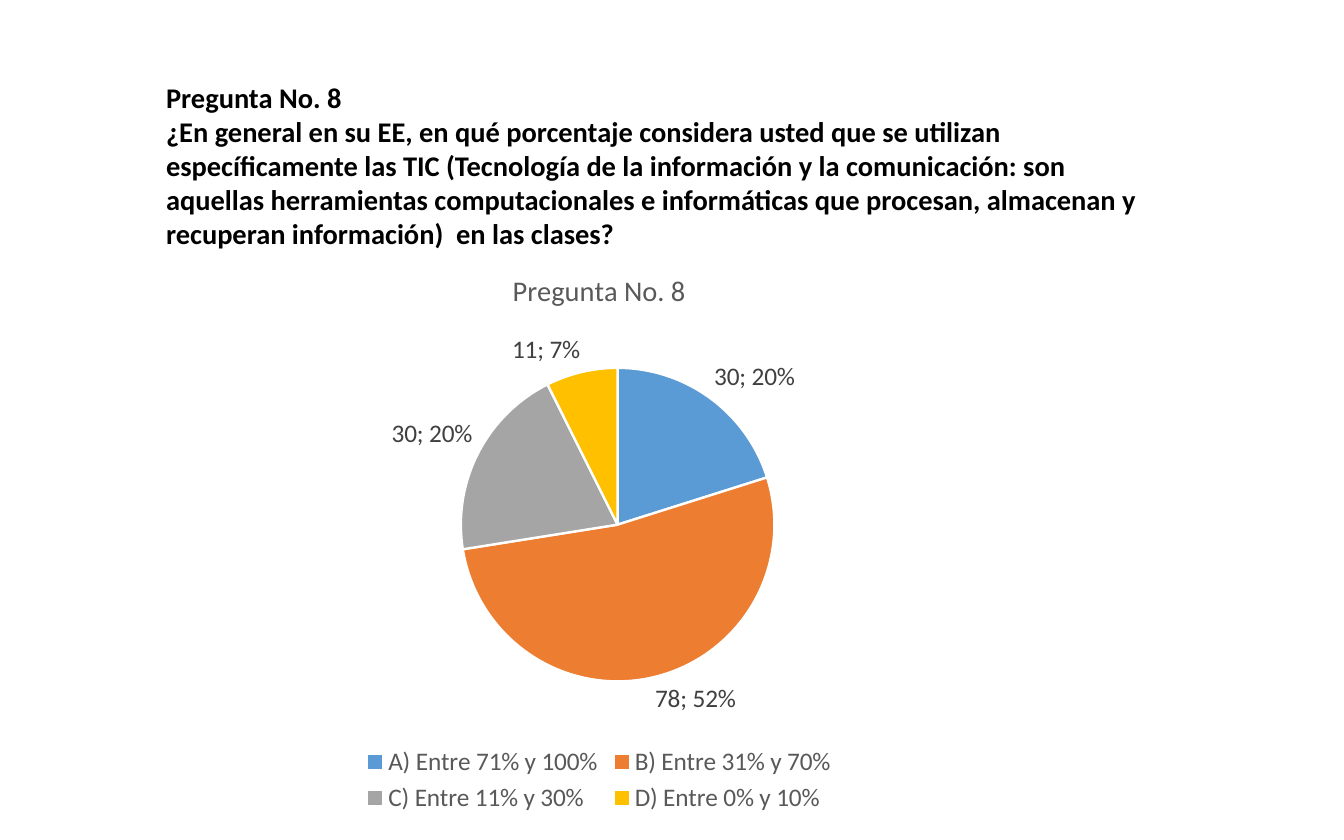
from lxml import etree
from pptx import Presentation
from pptx.chart.data import CategoryChartData
from pptx.dml.color import RGBColor
from pptx.enum.chart import XL_CHART_TYPE as CT, XL_LABEL_POSITION as LP, XL_LEGEND_POSITION as LEG
from pptx.oxml import parse_xml
from pptx.oxml.ns import nsdecls, qn
from pptx.util import Pt

FONT = "Calibri"
TITLE = "Pregunta No. 8"
QUESTION = (
    "¿En general en su EE, en qué porcentaje considera usted que se utilizan "
    "específicamente las TIC (Tecnología de la información y la comunicación: son "
    "aquellas herramientas computacionales e informáticas que procesan, almacenan y "
    "recuperan información)  en las clases?"
)
ANSWERS = [
    ("A) Entre 71% y 100%", 30, "5B9BD5"),
    ("B) Entre 31% y 70%", 78, "ED7D31"),
    ("C) Entre 11% y 30%", 30, "A5A5A5"),
    ("D) Entre 0% y 10%", 11, "FFC000"),
]


def rgb(value):
    """Turn a hex string into a colour."""
    return RGBColor.from_string(value)


def style(font, size, color, bold=False):
    """Set the typeface, size, colour and weight of a font."""
    font.name, font.size, font.bold = FONT, Pt(size), bold
    font.color.rgb = rgb(color)


def add_question(slide, x, y, w, h):
    """Write the heading and the question in the given box."""
    tf = slide.shapes.add_textbox(Pt(x), Pt(y), Pt(w), Pt(h)).text_frame
    tf.word_wrap = True
    tf.text = TITLE
    tf.add_paragraph().text = QUESTION
    for p in tf.paragraphs:
        for r in p.runs:
            style(r.font, 18, "000000", bold=True)


def place_plot(chart, x, y, w, h):
    """Fix the pie area as fractions of the chart."""
    area = chart.plots[0]._element.getparent()
    for old in area.findall(qn("c:layout")):
        area.remove(old)
    sizes = "".join(f'<c:{k} val="{v}"/>' for k, v in zip("xywh", (x, y, w, h)))
    area.insert(0, parse_xml(
        f'<c:layout {nsdecls("c")}><c:manualLayout><c:layoutTarget val="inner"/>'
        f'<c:xMode val="edge"/><c:yMode val="edge"/>{sizes}</c:manualLayout></c:layout>'))


def add_labels(plot):
    """Show value and percentage outside each slice."""
    plot.has_data_labels = True
    labels = plot.data_labels
    labels.show_value = labels.show_percentage = True
    labels.position = LP.OUTSIDE_END
    style(labels.font, 16, "404040")
    sep = etree.Element(qn("c:separator"))
    sep.text = "; "
    labels._element.find(qn("c:showBubbleSize")).addnext(sep)


def add_answers(slide, x, y, w, h):
    """Draw the pie of answers with title and legend in the given box."""
    data = CategoryChartData()
    data.categories = [name for name, _, _ in ANSWERS]
    data.add_series(TITLE, [count for _, count, _ in ANSWERS])
    chart = slide.shapes.add_chart(CT.PIE, Pt(x), Pt(y), Pt(w), Pt(h), data).chart
    style(chart.font, 10, "000000")

    chart.has_title = True
    tf = chart.chart_title.text_frame
    tf.text = TITLE
    style(tf.paragraphs[0].runs[0].font, 18, "595959")

    chart.has_legend = True
    chart.legend.position = LEG.BOTTOM
    chart.legend.include_in_layout = False
    style(chart.legend.font, 16, "595959")

    plot = chart.plots[0]
    plot.vary_by_categories = True
    for i, (_, _, color) in enumerate(ANSWERS):
        fmt = plot.series[0].points[i].format
        fmt.fill.solid()
        fmt.fill.fore_color.rgb = rgb(color)
        fmt.line.color.rgb = rgb("FFFFFF")
        fmt.line.width = Pt(1.5)
    add_labels(plot)
    place_plot(chart, 0.35, 0.21, 0.34, 0.55)


def main():
    """Build the slide and save it."""
    prs = Presentation()
    prs.slide_width, prs.slide_height = Pt(850.4), Pt(531.4)
    s = prs.slides.add_slide(prs.slide_layouts[6])
    add_question(s, 98, 47, 638, 117)
    add_answers(s, 85.7, 157, 586.8, 360.7)
    prs.save("out.pptx")


if __name__ == "__main__":
    main()
